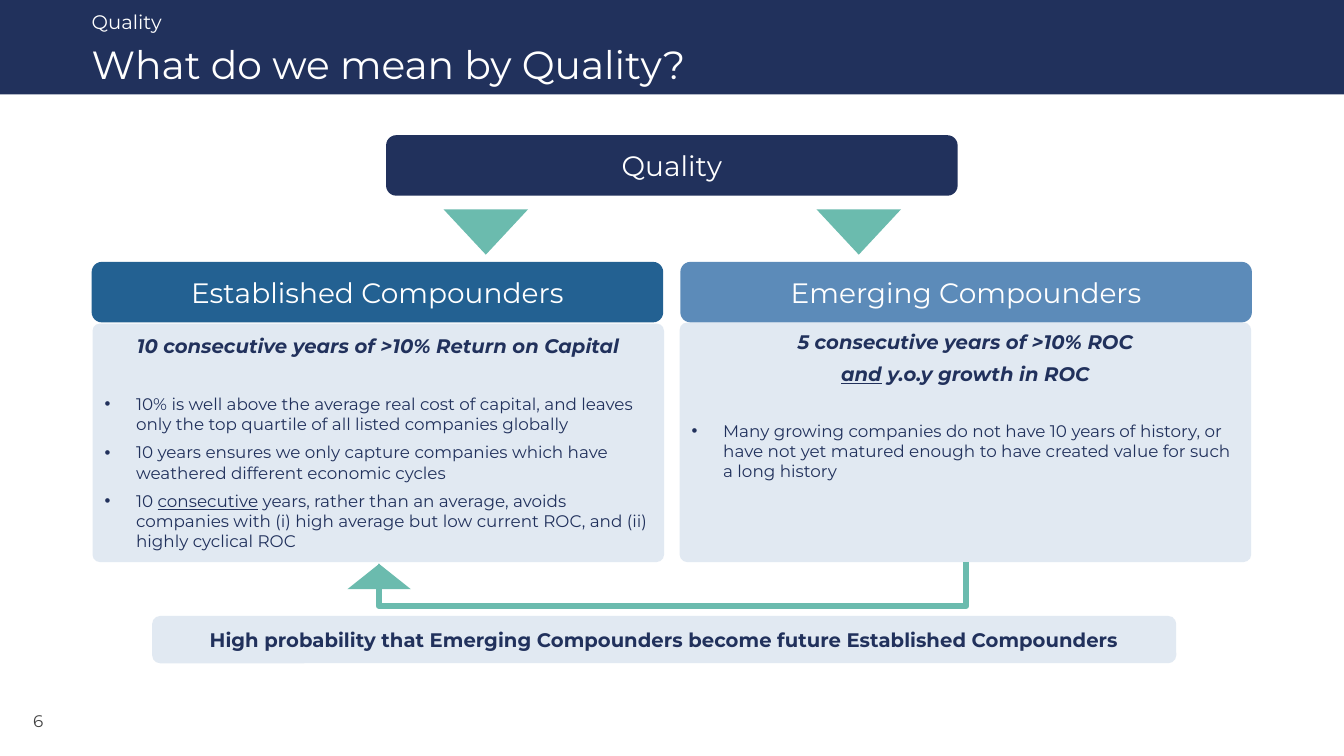
from dataclasses import dataclass

from lxml import etree
from pptx import Presentation
from pptx.dml.color import RGBColor
from pptx.enum.shapes import MSO_CONNECTOR, MSO_SHAPE
from pptx.enum.text import MSO_ANCHOR, MSO_AUTO_SIZE, PP_ALIGN
from pptx.oxml.ns import qn
from pptx.util import Pt

RECT = MSO_SHAPE.RECTANGLE
ROUND = MSO_SHAPE.ROUNDED_RECTANGLE
TRI = MSO_SHAPE.ISOSCELES_TRIANGLE
ELBOW = MSO_CONNECTOR.ELBOW
TOP, MID, LOW = MSO_ANCHOR.TOP, MSO_ANCHOR.MIDDLE, MSO_ANCHOR.BOTTOM
LEFT, CENTER = PP_ALIGN.LEFT, PP_ALIGN.CENTER
NO_FIT = MSO_AUTO_SIZE.NONE

FONT = "Montserrat"
NAVY, WHITE, GRAY = "21315C", "FFFFFF", "414141"
BLUE, SKY, PALE, TEAL = "236192", "5C8BB9", "9DB9D5", "6BBBAE"
WIDE, HIGH = 408.24, 43.2


@dataclass
class Line:
    text: str
    size: float = 12
    color: str = NAVY
    bold: bool = False
    ital: bool = False
    align: PP_ALIGN = LEFT
    after: float = 6
    dot: bool = False


@dataclass
class Box:
    left: float
    top: float
    width: float
    height: float
    fill: str
    lines: tuple[Line, ...] = ()
    kind: MSO_SHAPE = ROUND
    anchor: MSO_ANCHOR = MID
    alpha: int = 100
    round: float = 0.167
    turn: float = 0


def rgb(code: str) -> RGBColor:
    return RGBColor.from_string(code)


def write(frame, lines: tuple[Line, ...], anchor: MSO_ANCHOR) -> None:
    frame.word_wrap = True
    frame.auto_size = NO_FIT
    frame.vertical_anchor = anchor
    for i, line in enumerate(lines):
        para = frame.add_paragraph() if i else frame.paragraphs[0]
        para.alignment = line.align
        para.space_before = Pt(0)
        para.space_after = Pt(line.after)
        if line.dot:
            props = para._p.get_or_add_pPr()
            props.set("marL", str(Pt(22.5)))
            props.set("indent", str(Pt(-22.5)))
            etree.SubElement(props, qn("a:buFont")).set("typeface", "Arial")
            etree.SubElement(props, qn("a:buChar")).set("char", "•")
        for j, part in enumerate(line.text.split("_")):
            if not part:
                continue
            run = para.add_run()
            run.text = part
            font = run.font
            font.name, font.size = FONT, Pt(line.size)
            font.bold, font.italic = line.bold, line.ital
            font.underline = j % 2 == 1
            font.color.rgb = rgb(line.color)


def draw(slide, box: Box):
    shape = slide.shapes.add_shape(
        box.kind, Pt(box.left), Pt(box.top), Pt(box.width), Pt(box.height))
    shape.shadow.inherit = False
    shape.fill.solid()
    shape.fill.fore_color.rgb = rgb(box.fill)
    shape.line.fill.background()
    shape.rotation = box.turn
    if box.kind == ROUND:
        shape.adjustments[0] = box.round
    if box.alpha < 100:
        tint = shape.element.spPr.find(f".//{qn('a:srgbClr')}")
        etree.SubElement(tint, qn("a:alpha")).set("val", str(box.alpha * 1000))
    if box.lines:
        write(shape.text_frame, box.lines, box.anchor)
    return shape


def label(slide, left: float, top: float, width: float, height: float,
          line: Line, anchor: MSO_ANCHOR, inset: bool) -> None:
    shape = slide.shapes.add_textbox(Pt(left), Pt(top), Pt(width), Pt(height))
    if not inset:
        trim(shape.text_frame)
    write(shape.text_frame, (line,), anchor)


def trim(frame) -> None:
    frame.margin_left = frame.margin_right = Pt(0)
    frame.margin_top = frame.margin_bottom = Pt(0)


def head(slide) -> None:
    band = draw(slide, Box(0, 0, 960, 67.5, NAVY, kind=RECT))
    title = slide.shapes.title
    band.element.addnext(title.element)
    title.left, title.top = Pt(65.5), Pt(23.76)
    title.width, title.height = Pt(846.7), Pt(43.9)
    trim(title.text_frame)
    line = Line("What do we mean by Quality?", 28, WHITE, after=4)
    write(title.text_frame, (line,), MID)
    label(slide, 65.5, 6.5, 846.7, 17.3,
          Line("Quality", 14, WHITE, after=4), LOW, False)


def link(slide, left: float, right: float, top: float, drop: float) -> None:
    span, thin = right - left, 1
    mid = (left + right) / 2
    wire = slide.shapes.add_connector(
        ELBOW, Pt(mid - thin / 2), Pt(top - span / 2),
        Pt(mid + thin / 2), Pt(top + span / 2))
    wire.line.color.rgb = rgb(TEAL)
    wire.line.width = Pt(4.5)
    props = wire.element.spPr
    props.find(qn("a:xfrm")).set("rot", "5400000")
    geom = props.find(qn("a:prstGeom"))
    guides = geom.find(qn("a:avLst"))
    if guides is None:
        guides = etree.SubElement(geom, qn("a:avLst"))
    guide = etree.SubElement(guides, qn("a:gd"))
    guide.set("name", "adj1")
    guide.set("fmla", f"val {round(drop / thin * 100000)}")
    etree.SubElement(props.find(qn("a:ln")), qn("a:tailEnd")).set("type", "triangle")
    etree.SubElement(props, qn("a:effectLst"))


def name(text: str) -> tuple[Line, ...]:
    return (Line(text, 20, WHITE, align=CENTER, after=0),)


def lead(text: str, after: float = 6) -> Line:
    return Line(text, 14, bold=True, ital=True, align=CENTER, after=after)


LONG = (
    lead("10 consecutive years of >10% Return on Capital", 25.4),
    Line("10% is well above the average real cost of capital, and leaves "
         "only the top quartile of all listed companies globally", dot=True),
    Line("10 years ensures we only capture companies which have weathered "
         "different economic cycles", dot=True),
    Line("10 _consecutive_ years, rather than an average, avoids companies "
         "with (i) high average but low current ROC, and (ii) highly "
         "cyclical ROC", dot=True),
)
YOUNG = (
    lead("5 consecutive years of >10% ROC"),
    lead("_and_ y.o.y growth in ROC", 25.4),
    Line("Many growing companies do not have 10 years of history, or have "
         "not yet matured enough to have created value for such a long "
         "history", dot=True),
)
CLOSE = (Line("High probability that Emerging Compounders become future "
              "Established Compounders", 14, bold=True, align=CENTER),)

BOXES = (
    Box(66.1, 231.1, WIDE, 170.4, PALE, LONG, alpha=30, round=0.031),
    Box(485.5, 230.4, WIDE, 171.1, PALE, YOUNG, anchor=TOP, alpha=30, round=0.031),
    Box(65.5, 187.1, WIDE, HIGH, BLUE, name("Established Compounders")),
    Box(486, 187.1, WIDE, HIGH, SKY, name("Emerging Compounders")),
    Box(275.8, 96.6, WIDE, HIGH, NAVY, name("Quality")),
    Box(316.8, 149.5, 60.4, 32.4, TEAL, kind=TRI, turn=180),
    Box(583.2, 149.5, 60.4, 32.4, TEAL, kind=TRI, turn=180),
    Box(108.7, 440, 731.5, 33.8, PALE, CLOSE, alpha=30),
    Box(248.2, 402.8, 45.2, 18, TEAL, kind=TRI),
)


def main() -> None:
    deck = Presentation()
    deck.slide_width, deck.slide_height = Pt(960), Pt(540)
    slide = deck.slides.add_slide(deck.slide_layouts[5])
    head(slide)
    for box in BOXES:
        draw(slide, box)
    link(slide, 270.7, 690.1, 401.8, 31.7)
    label(slide, 16.6, 504, 47.5, 28.8,
          Line("6", 12, GRAY, after=0), TOP, True)
    deck.save("out.pptx")


if __name__ == "__main__":
    main()
